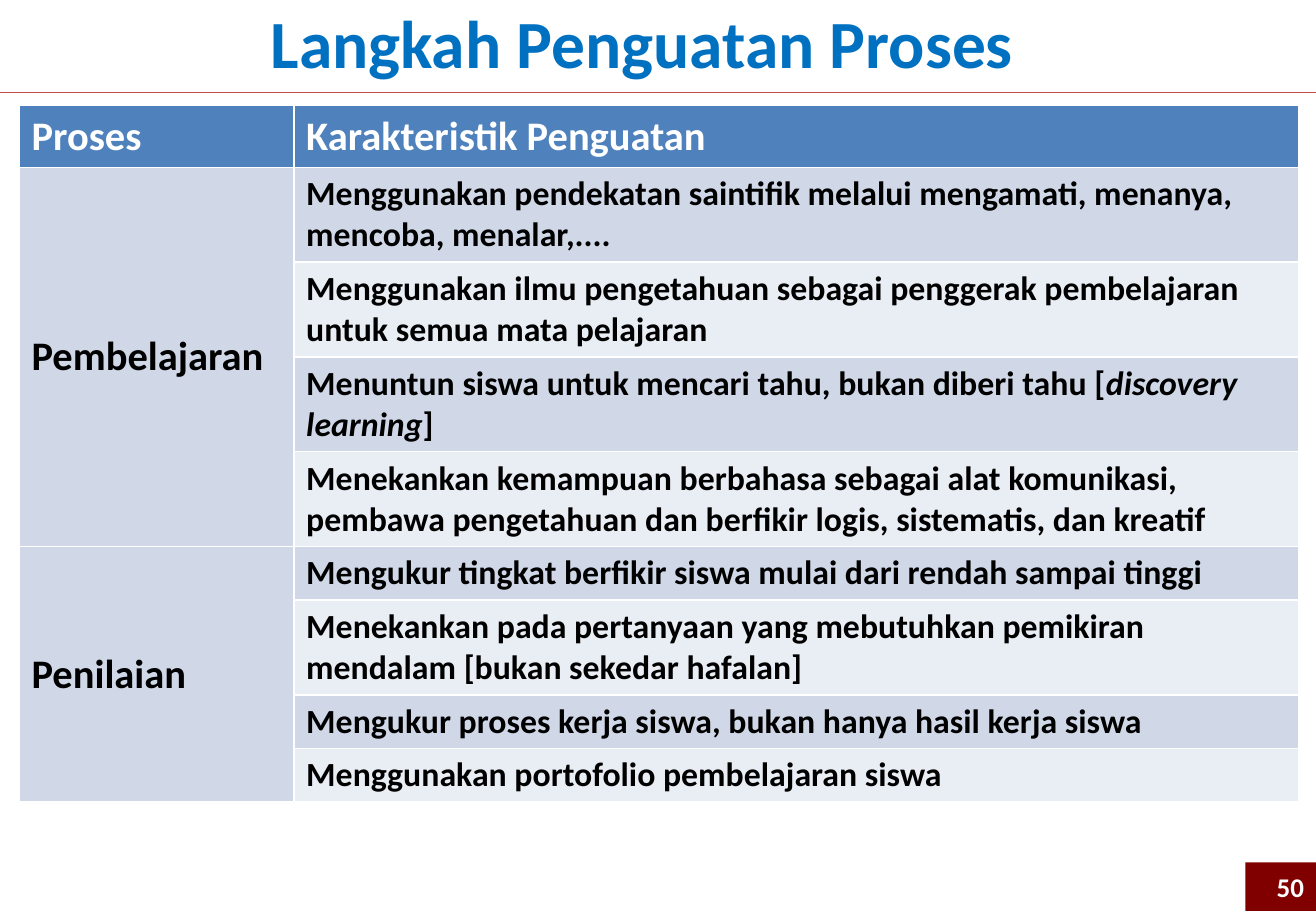
"""Build the slide on strengthening the learning and assessment process."""
import dataclasses
import typing

import pptx
import pptx.dml.color
import pptx.enum.shapes
import pptx.enum.text
import pptx.oxml.ns
import pptx.slide
import pptx.table
import pptx.text.text
import pptx.util
from lxml import etree

WIDE = pptx.util.Inches(10.83)
HIGH = pptx.util.Inches(7.5)
ALIGN = pptx.enum.text.PP_ALIGN
ANCHOR = pptx.enum.text.MSO_ANCHOR
COLORS = {
    "title": "0070C0", "rule": "BF4C48", "badge": "800000", "head": "4F81BD",
    "odd": "D0D8E8", "even": "E9EDF4", "white": "FFFFFF", "black": "000000",
}
COLS = (20.87, 76.36)
HEAD, ONE, TWO = 6.67, 5.73, 10.27


@dataclasses.dataclass(frozen=True)
class Box:
    """A frame in percent of the slide's width and height."""
    left: float
    top: float
    width: float
    height: float

    def place(self) -> tuple[int, int, int, int]:
        """Return the frame as slide lengths."""
        return across(self.left), down(self.top), across(self.width), down(self.height)


@dataclasses.dataclass(frozen=True)
class Style:
    """The look of a text."""
    size: int
    color: str
    align: typing.Any = ALIGN.LEFT


@dataclasses.dataclass(frozen=True)
class Trait:
    """A table row, with its italic words between asterisks."""
    text: str
    height: float = TWO


@dataclasses.dataclass(frozen=True)
class Group:
    """A process and the traits listed beside it."""
    name: str
    traits: tuple[Trait, ...]


GROUPS = (
    Group("Pembelajaran", (
        Trait("Menggunakan pendekatan saintifik melalui mengamati, menanya, mencoba, menalar,...."),
        Trait("Menggunakan ilmu pengetahuan sebagai penggerak pembelajaran untuk semua mata pelajaran"),
        Trait("Menuntun siswa untuk mencari tahu, bukan diberi tahu [*discovery learning*]"),
        Trait("Menekankan kemampuan berbahasa sebagai alat komunikasi, "
              "pembawa pengetahuan dan berfikir logis, sistematis, dan kreatif"),
    )),
    Group("Penilaian", (
        Trait("Mengukur tingkat berfikir siswa mulai dari rendah sampai tinggi", ONE),
        Trait("Menekankan pada pertanyaan yang mebutuhkan pemikiran mendalam [bukan sekedar hafalan]"),
        Trait("Mengukur proses kerja siswa, bukan hanya hasil kerja siswa", ONE),
        Trait("Menggunakan portofolio pembelajaran siswa", ONE),
    )),
)


def across(share: float) -> int:
    """Turn a percentage of the slide's width into a length."""
    return round(WIDE * share / 100)


def down(share: float) -> int:
    """Turn a percentage of the slide's height into a length."""
    return round(HIGH * share / 100)


def paint(part: typing.Any, name: str) -> None:
    """Give a fill one plain colour."""
    part.solid()
    part.fore_color.rgb = pptx.dml.color.RGBColor.from_string(COLORS[name])


def write(frame: pptx.text.text.TextFrame, text: str, style: Style) -> None:
    """Write one paragraph, with words between asterisks in italics."""
    para = frame.paragraphs[0]
    para.alignment = style.align
    for spot, piece in enumerate(text.split("*")):
        run = para.add_run()
        run.text = piece
        look = {"name": "Calibri", "size": pptx.util.Pt(style.size),
                "bold": True, "italic": spot % 2 == 1}
        for key, value in look.items():
            setattr(run.font, key, value)
        paint(run.font.fill, style.color)


def fill(cell: typing.Any, text: str, back: str, style: Style) -> None:
    """Colour a table cell and write its text."""
    paint(cell.fill, back)
    write(cell.text_frame, text, style)


def draw_grid(slide: pptx.slide.Slide) -> None:
    """Draw the table of processes and traits."""
    rows = [HEAD] + [trait.height for group in GROUPS for trait in group.traits]
    box = Box(1.48, 11.6, sum(COLS), sum(rows))
    grid = slide.shapes.add_table(len(rows), len(COLS), *box.place()).table
    grid.horz_banding = False
    for col, share in zip(grid.columns, COLS):
        col.width = across(share)
    for row, share in zip(grid.rows, rows):
        row.height = down(share)
    for col, text in enumerate(("Proses", "Karakteristik Penguatan")):
        fill(grid.cell(0, col), text, "head", Style(24, "white"))
    top = 1
    for group in GROUPS:
        first = grid.cell(top, 0)
        first.merge(grid.cell(top + len(group.traits) - 1, 0))
        first.vertical_anchor = ANCHOR.MIDDLE
        fill(first, group.name, "odd", Style(24, "black"))
        for row, trait in enumerate(group.traits, top):
            back = "odd" if row % 2 else "even"
            fill(grid.cell(row, 1), trait.text, back, Style(20, "black"))
        top += len(group.traits)


def draw_title(slide: pptx.slide.Slide) -> None:
    """Draw the title and the rule below it."""
    frame = slide.shapes.add_textbox(*Box(1.29, -0.53, 93.81, 10.27).place()).text_frame
    frame.word_wrap = True
    frame.auto_size = pptx.enum.text.MSO_AUTO_SIZE.SHAPE_TO_FIT_TEXT
    write(frame, " Langkah Penguatan Proses", Style(40, "title", ALIGN.CENTER))
    level = down(10.13)
    rule = slide.shapes.add_connector(
        pptx.enum.shapes.MSO_CONNECTOR.STRAIGHT, 0, level, WIDE, level)
    paint(rule.line.fill, "rule")
    rule.line.width = pptx.util.Pt(0.75)
    etree.SubElement(rule.element.spPr, pptx.oxml.ns.qn("a:effectLst"))


def draw_badge(slide: pptx.slide.Slide) -> None:
    """Draw the page number in the corner."""
    badge = slide.shapes.add_shape(
        pptx.enum.shapes.MSO_SHAPE.RECTANGLE, *Box(94.64, 94.67, 5.36, 5.33).place())
    badge.shadow.inherit = False
    paint(badge.fill, "badge")
    badge.line.fill.background()
    badge.text_frame.vertical_anchor = ANCHOR.MIDDLE
    write(badge.text_frame, "50", Style(16, "white", ALIGN.RIGHT))


def main() -> None:
    """Build and save the slide."""
    deck = pptx.Presentation()
    deck.slide_width, deck.slide_height = WIDE, HIGH
    slide = deck.slides.add_slide(deck.slide_layouts[6])
    paint(slide.background.fill, "white")
    for draw in (draw_grid, draw_title, draw_badge):
        draw(slide)
    deck.save("out.pptx")


if __name__ == "__main__":
    main()
